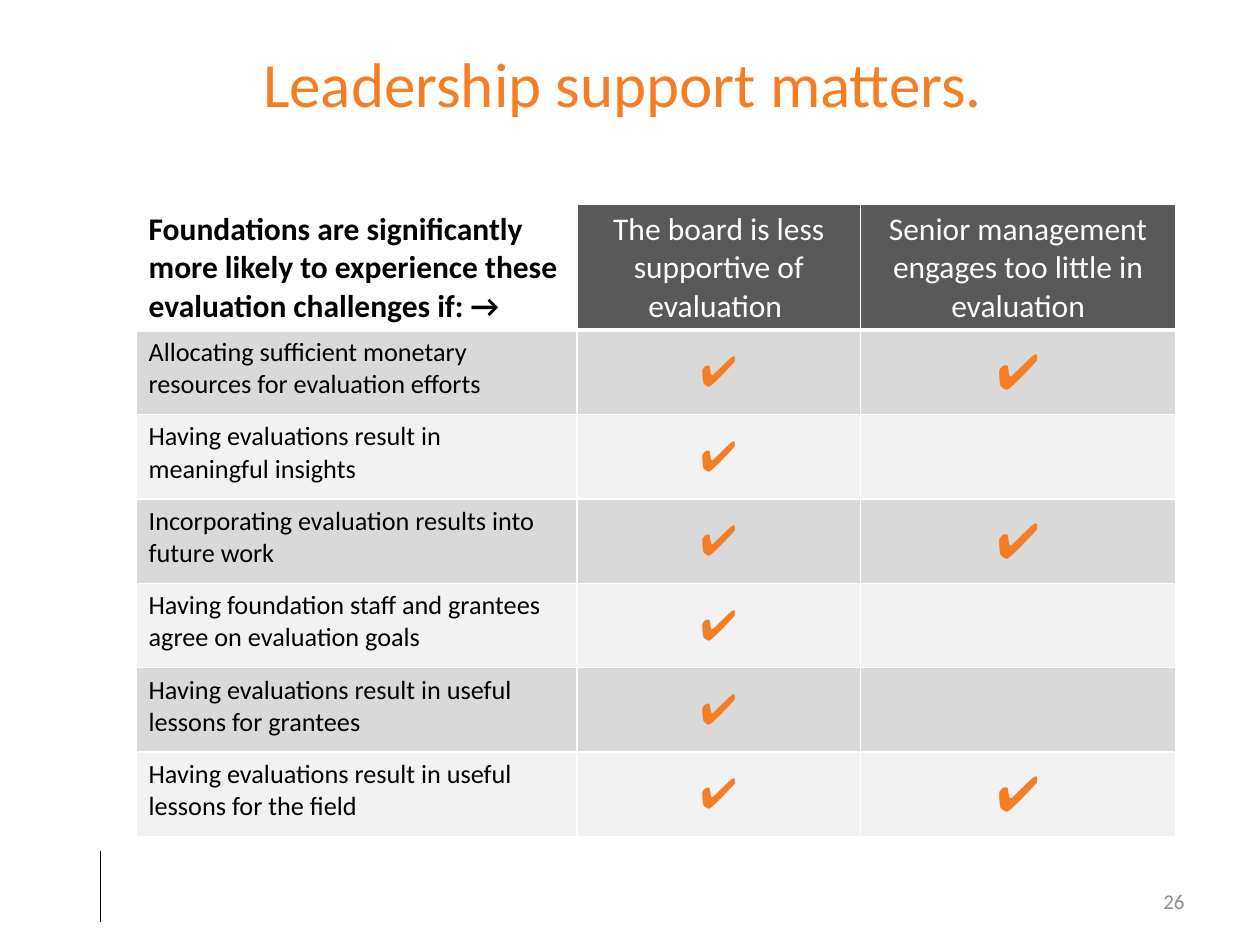
import pptx
import pptx.dml.color
import pptx.enum.shapes
import pptx.enum.text
import pptx.oxml.ns
import pptx.util
from lxml import etree
from pptx.util import Inches

COLORS = {
    "orange": "F57E25",
    "black": "000000",
    "white": "FFFFFF",
    "header": "595959",
    "band_dark": "D9D9D9",
    "band_light": "F2F2F2",
    "page_number": "8C8C8C",
}
ALIGN = pptx.enum.text.PP_ALIGN
ANCHOR = pptx.enum.text.MSO_ANCHOR

HEADERS = [
    "Foundations are significantly more likely to experience these evaluation challenges if: →",
    "The board is less supportive of evaluation ",
    "Senior management engages too little in evaluation",
]
# Challenge, linked to board support, linked to management engagement
CHALLENGES = [
    ("Allocating sufficient monetary resources for evaluation efforts", True, True),
    ("Having evaluations result in meaningful insights", True, False),
    ("Incorporating evaluation results into future work", True, True),
    ("Having foundation staff and grantees agree on evaluation goals", True, False),
    ("Having evaluations result in useful lessons for grantees", True, False),
    ("Having evaluations result in useful lessons for the field", True, True),
]
COLUMN_WIDTHS = [3.5, 2.25, 2.5]
HEADER_HEIGHT, ROW_HEIGHT = 0.96, 0.67
CHECK_SIZES = [24, 28]


def rgb(name):
    return pptx.dml.color.RGBColor.from_string(COLORS[name])


def write(frame, text, size, color, align=ALIGN.LEFT, bold=False, font="Calibri"):
    paragraph = frame.paragraphs[0]
    paragraph.alignment = align
    run = paragraph.add_run()
    run.text = text
    run.font.name = font
    run.font.size = pptx.util.Pt(size)
    run.font.bold = bold
    run.font.color.rgb = rgb(color)


def add_label(slide, box, text, size, color, align):
    label = slide.shapes.add_textbox(*map(Inches, box)).text_frame
    label.word_wrap = True
    label.vertical_anchor = ANCHOR.MIDDLE
    write(label, text, size, color, align)


def style_cell(cell, fill, top=1, bottom=1):
    """Give the cell white borders (widths in points) and its fill."""
    properties = cell._tc.get_or_add_tcPr()
    for side, width in (("L", 1), ("R", 1), ("T", top), ("B", bottom)):
        border = etree.SubElement(properties, pptx.oxml.ns.qn(f"a:ln{side}"),
                                  w=str(pptx.util.Pt(width)))
        solid = etree.SubElement(border, pptx.oxml.ns.qn("a:solidFill"))
        etree.SubElement(solid, pptx.oxml.ns.qn("a:srgbClr"), val=COLORS["white"])
    if fill:
        cell.fill.solid()
        cell.fill.fore_color.rgb = rgb(fill)
    else:
        cell.fill.background()


def add_challenge_table(slide, box):
    table = slide.shapes.add_table(len(CHALLENGES) + 1, len(HEADERS),
                                   *map(Inches, box)).table
    for column, width in zip(table.columns, COLUMN_WIDTHS):
        column.width = Inches(width)
    for index, row in enumerate(table.rows):
        row.height = Inches(ROW_HEIGHT if index else HEADER_HEIGHT)

    # Header row
    for column, header in enumerate(HEADERS):
        cell = table.cell(0, column)
        style_cell(cell, "header" if column else None, bottom=3)
        if column:
            write(cell.text_frame, header, 18, "white", ALIGN.CENTER)
        else:
            write(cell.text_frame, header, 18, "black", bold=True)

    # Challenge rows with their check marks
    for row, (challenge, *checks) in enumerate(CHALLENGES, start=1):
        band = "band_dark" if row % 2 else "band_light"
        top = 3 if row == 1 else 1
        challenge_cell = table.cell(row, 0)
        style_cell(challenge_cell, band, top)
        write(challenge_cell.text_frame, challenge, 15, "black")
        for column, (checked, size) in enumerate(zip(checks, CHECK_SIZES), start=1):
            check_cell = table.cell(row, column)
            style_cell(check_cell, band, top)
            check_cell.vertical_anchor = ANCHOR.MIDDLE
            if checked:
                write(check_cell.text_frame, "✔", size, "orange", ALIGN.CENTER, font="Arial")


def add_footer(slide, box):
    left, top, width, height = box
    # Vertical rule
    rule = slide.shapes.add_connector(
        pptx.enum.shapes.MSO_CONNECTOR.STRAIGHT,
        Inches(left), Inches(top), Inches(left), Inches(top + height))
    rule.line.color.rgb = rgb("black")
    rule.line.width = pptx.util.Pt(0.5)
    etree.SubElement(rule._element.spPr, pptx.oxml.ns.qn("a:effectLst"))
    # Page number
    number_width = 2.33
    add_label(slide, (left + width - number_width, top + 0.2, number_width, 0.4),
              "26", 12, "page_number", ALIGN.RIGHT)


def main():
    deck = pptx.Presentation()
    deck.slide_width, deck.slide_height = Inches(10), Inches(7.5)
    slide = deck.slides.add_slide(deck.slide_layouts[6])
    add_footer(slide, (0.8, 6.75, 8.7, 0.57))
    add_label(slide, (0, 0.08, 10, 1.15), "Leadership support matters. ",
              36, "orange", ALIGN.CENTER)
    table_height = HEADER_HEIGHT + ROW_HEIGHT * len(CHALLENGES)
    add_challenge_table(slide, (1.08, 1.62, sum(COLUMN_WIDTHS), table_height))
    deck.save("out.pptx")


if __name__ == "__main__":
    main()
